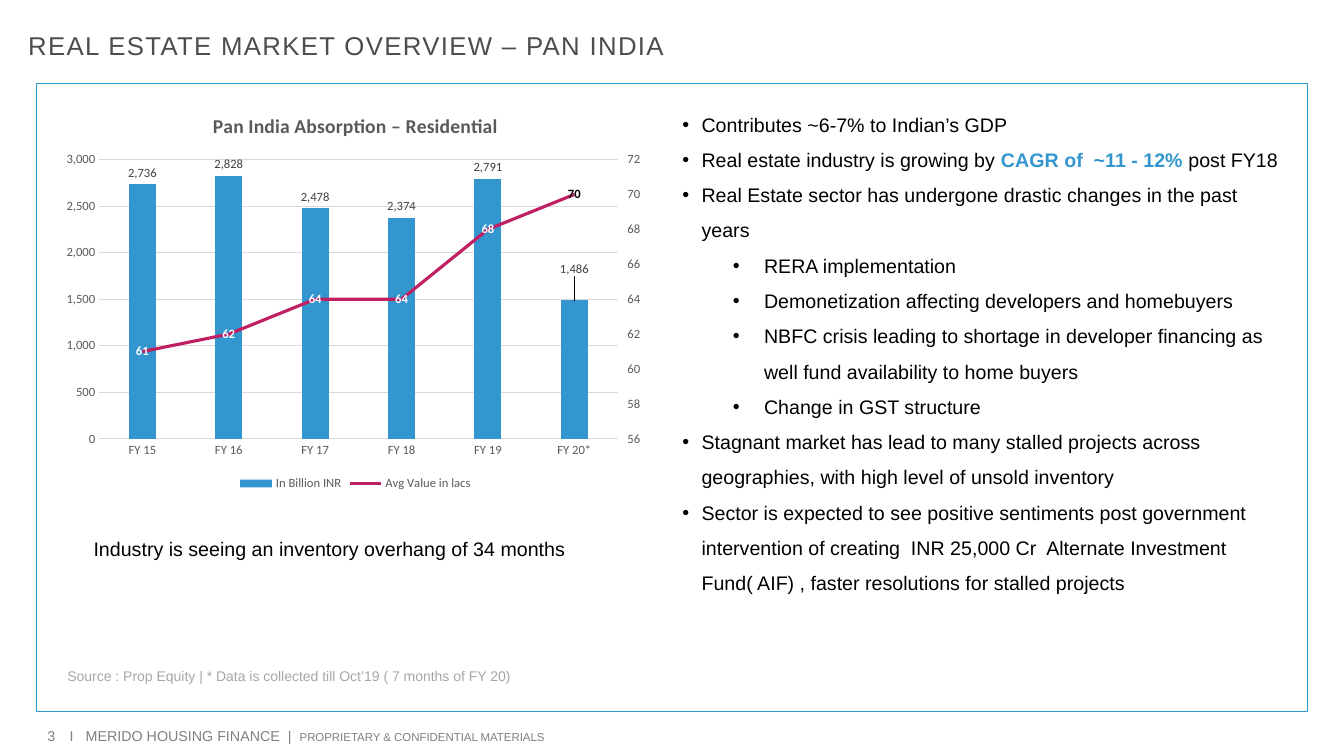
from copy import deepcopy
from dataclasses import dataclass

from lxml import etree
from pptx import Presentation
from pptx.chart.axis import CategoryAxis, ValueAxis
from pptx.chart.data import CategoryChartData
from pptx.dml.color import RGBColor
from pptx.enum.chart import (XL_CHART_TYPE, XL_LABEL_POSITION, XL_LEGEND_POSITION,
                             XL_MARKER_STYLE, XL_TICK_MARK)
from pptx.enum.shapes import MSO_SHAPE
from pptx.enum.text import MSO_ANCHOR, MSO_AUTO_SIZE, PP_ALIGN
from pptx.oxml import parse_xml
from pptx.oxml.ns import nsdecls, qn
from pptx.util import Inches, Pt

COLUMNS = XL_CHART_TYPE.COLUMN_CLUSTERED
ABOVE, CENTER = XL_LABEL_POSITION.OUTSIDE_END, XL_LABEL_POSITION.CENTER
BOTTOM = XL_LEGEND_POSITION.BOTTOM
NO_MARKER = XL_MARKER_STYLE.NONE
TICK_NONE, TICK_OUT = XL_TICK_MARK.NONE, XL_TICK_MARK.OUTSIDE
RECT = MSO_SHAPE.RECTANGLE
TOP, MIDDLE = MSO_ANCHOR.TOP, MSO_ANCHOR.MIDDLE
NO_FIT = MSO_AUTO_SIZE.NONE
LEFT = PP_ALIGN.LEFT

BLACK = RGBColor(0x00, 0x00, 0x00)
WHITE = RGBColor(0xFF, 0xFF, 0xFF)
BLUE = RGBColor(0x33, 0x96, 0xCE)
MAGENTA = RGBColor(0xC0, 0x1F, 0x63)
TITLE_GRAY = RGBColor(0x4D, 0x4D, 0x4D)
FOOTER_GRAY = RGBColor(0x80, 0x80, 0x80)
SOURCE_GRAY = RGBColor(0xA6, 0xA6, 0xA6)
AXIS_GRAY = RGBColor(0x59, 0x59, 0x59)
LABEL_GRAY = RGBColor(0x40, 0x40, 0x40)
GRID_GRAY = RGBColor(0xD9, 0xD9, 0xD9)

THOUSANDS = "#,##0"
RIGHT_VALUE_ID, RIGHT_CATEGORY_ID = "5001", "5002"


@dataclass
class Span:
    text: str
    size: float = 14
    color: RGBColor = BLACK
    bold: bool = False
    spacing: int = 0


@dataclass
class Bullet:
    spans: list[Span]
    level: int = 0


@dataclass
class Box:
    left: float
    top: float
    width: float
    height: float

    def emu(self) -> tuple:
        return tuple(Inches(v) for v in (self.left, self.top, self.width, self.height))


INDENTS = [(0.19, -0.19), (0.81, -0.31)]
BULLETS = [
    Bullet([Span("Contributes ~6-7% to Indian’s GDP")]),
    Bullet([Span("Real estate industry is growing by "),
            Span("CAGR of  ~11 - 12% ", color=BLUE, bold=True), Span("post FY18")]),
    Bullet([Span("Real Estate sector has undergone drastic changes in the past years")]),
    Bullet([Span("RERA implementation")], 1),
    Bullet([Span("Demonetization affecting developers and homebuyers")], 1),
    Bullet([Span("NBFC crisis leading to shortage in developer financing as well fund "
                 "availability to home buyers")], 1),
    Bullet([Span("Change in GST structure")], 1),
    Bullet([Span("Stagnant market has lead to many stalled projects across geographies, "
                 "with high level of unsold inventory")]),
    Bullet([Span("Sector is expected to see positive sentiments post government intervention "
                 "of creating  INR 25,000 Cr  Alternate Investment Fund( AIF) , faster "
                 "resolutions for stalled projects")]),
]


def set_font(font, size: float, color: RGBColor, bold: bool = False, name: str = "Calibri") -> None:
    font.name, font.size, font.bold = name, Pt(size), bold
    font.color.rgb = color


def add_spans(p, spans: list[Span]) -> None:
    for span in spans:
        r = p.add_run()
        r.text = span.text
        set_font(r.font, span.size, span.color, span.bold, "Arial")
        if span.spacing:
            r.font._element.set("spc", str(span.spacing * 100))


def add_text(slide, box: Box, spans: list[Span], *, inset: bool = True,
             anchor=TOP, wrap: bool = True):
    tf = slide.shapes.add_textbox(*box.emu()).text_frame
    tf.word_wrap, tf.vertical_anchor = wrap, anchor
    if not inset:
        tf.margin_left = tf.margin_right = tf.margin_top = tf.margin_bottom = 0
    add_spans(tf.paragraphs[0], spans)
    return tf


def add_bullets(slide, box: Box, bullets: list[Bullet]) -> None:
    tf = add_text(slide, box, [])
    for i, bullet in enumerate(bullets):
        p = tf.add_paragraph() if i else tf.paragraphs[0]
        margin, indent = INDENTS[bullet.level]
        pPr = p._p.get_or_add_pPr()
        pPr.set("marL", str(Inches(margin)))
        pPr.set("indent", str(Inches(indent)))
        etree.SubElement(pPr, qn("a:buFont")).set("typeface", "Arial")
        etree.SubElement(pPr, qn("a:buChar")).set("char", "•")
        p.level, p.line_spacing = bullet.level, 1.5
        add_spans(p, bullet.spans)


def manual_layout(**values):
    items = "".join(f'<c:{key} val="{value}"/>' for key, value in values.items())
    return parse_xml(f'<c:layout {nsdecls("c")}><c:manualLayout>{items}'
                     "</c:manualLayout></c:layout>")


def style_axis(axis) -> None:
    axis.major_tick_mark = axis.minor_tick_mark = TICK_NONE
    set_font(axis.tick_labels.font, 9, AXIS_GRAY)


def move_to_right_axis(chart) -> None:
    """Turn the second column series into a line on its own right-hand axis."""
    bars = chart.plots[0]._element
    ser = bars.findall(qn("c:ser"))[1]
    for invert in ser.findall(qn("c:invertIfNegative")):
        ser.remove(invert)
    line = parse_xml(f'<c:lineChart {nsdecls("c")}><c:grouping val="standard"/>'
                     '<c:varyColors val="0"/><c:marker val="1"/>'
                     f'<c:axId val="{RIGHT_CATEGORY_ID}"/><c:axId val="{RIGHT_VALUE_ID}"/>'
                     "</c:lineChart>")
    line.insert(2, ser)
    bars.addnext(line)

    left = chart.value_axis._element
    cat_el, val_el = deepcopy(chart.category_axis._element), deepcopy(left)
    left.addnext(val_el)
    val_el.addnext(cat_el)
    for el, own, other in ((cat_el, RIGHT_CATEGORY_ID, RIGHT_VALUE_ID),
                           (val_el, RIGHT_VALUE_ID, RIGHT_CATEGORY_ID)):
        el.find(qn("c:axId")).set("val", own)
        el.find(qn("c:crossAx")).set("val", other)
    val_el.find(qn("c:axPos")).set("val", "r")
    val_el.find(qn("c:crosses")).set("val", "max")
    CategoryAxis(cat_el).visible = False
    right = ValueAxis(val_el)
    right.has_major_gridlines = False
    right.minimum_scale, right.maximum_scale, right.major_unit = 56, 72, 2
    right.major_tick_mark = TICK_OUT


def label_series(series, position, color: RGBColor, last_color: RGBColor, bold: bool):
    """Label every point and return the label of the last one."""
    labels = series.data_labels
    labels.show_value, labels.position = True, position
    labels.number_format, labels.number_format_is_linked = THOUSANDS, False
    set_font(labels.font, 9, color, bold)
    last = series.points[5].data_label
    set_font(last.font, 9, last_color, bold)
    last.position = position
    return last


def add_absorption_chart(slide, box: Box) -> None:
    data = CategoryChartData(number_format=THOUSANDS)
    data.categories = ["FY 15", "FY 16", "FY 17", "FY 18", "FY 19", "FY 20*"]
    data.add_series("In Billion INR", [2736, 2828, 2478, 2374, 2791, 1486])
    data.add_series("Avg Value in lacs", [61, 62, 64, 64, 68, 70])
    chart = slide.shapes.add_chart(COLUMNS, *box.emu(), data).chart
    set_font(chart.font, 10, BLACK)
    chart.has_title = True
    r = chart.chart_title.text_frame.paragraphs[0].add_run()
    r.text = "Pan India Absorption – Residential"
    set_font(r.font, 14, AXIS_GRAY, True)
    chart.has_legend = True
    chart.legend.position, chart.legend.include_in_layout = BOTTOM, False
    set_font(chart.legend.font, 9, AXIS_GRAY)

    cat, val = chart.category_axis, chart.value_axis
    for axis in (cat, val):
        style_axis(axis)
    val.minimum_scale, val.maximum_scale, val.major_unit = 0, 3000, 500
    val.tick_labels.number_format, val.tick_labels.number_format_is_linked = THOUSANDS, False
    val.format.line.fill.background()
    for line in (cat.format.line, val.major_gridlines.format.line):
        line.color.rgb, line.width = GRID_GRAY, Pt(0.75)
    move_to_right_axis(chart)

    columns, trend = chart.plots
    columns.gap_width, columns.vary_by_categories = 219, False
    volume, price = columns.series[0], trend.series[0]
    volume.format.fill.solid()
    volume.format.fill.fore_color.rgb = BLUE
    price.format.line.color.rgb, price.format.line.width = MAGENTA, Pt(2.25)
    price.marker.style, price.smooth = NO_MARKER, False
    last = label_series(volume, ABOVE, LABEL_GRAY, LABEL_GRAY, False)
    last._get_or_add_dLbl().insert(1, manual_layout(x=0, y=-0.05))
    label_series(price, CENTER, WHITE, BLACK, True)
    columns._element.getparent().insert(0, manual_layout(
        layoutTarget="inner", xMode="edge", yMode="edge", x=0.07, y=0.16, w=0.87, h=0.7))


def main() -> None:
    prs = Presentation()
    prs.slide_width, prs.slide_height = Inches(13.33), Inches(7.5)
    slide = prs.slides.add_slide(prs.slide_layouts[5])

    title = slide.shapes.title
    title.left, title.top, title.width, title.height = Box(0.18, 0.24, 12.94, 0.41).emu()
    tf = title.text_frame
    tf.auto_size, tf.vertical_anchor = NO_FIT, MIDDLE
    p = tf.paragraphs[0]
    p.alignment = LEFT
    add_spans(p, [Span("REAL ESTATE MARKET OVERVIEW – PAN INDIA", 18.4, TITLE_GRAY, spacing=1)])

    frame = slide.shapes.add_shape(RECT, *Box(0.36, 0.83, 12.61, 6.23).emu())
    frame.shadow.inherit = False
    frame.fill.background()
    frame.line.color.rgb, frame.line.width = BLUE, Pt(1)

    add_bullets(slide, Box(6.67, 0.95, 6.23, 5.89), BULLETS)
    add_absorption_chart(slide, Box(0.57, 0.95, 5.91, 3.96))
    add_text(slide, Box(0.83, 5.28, 5.26, 0.34),
             [Span("Industry is seeing an inventory overhang of 34 months")])
    add_text(slide, Box(0.57, 6.57, 5.79, 0.27),
             [Span("Source : Prop Equity | * Data is collected till Oct’19 ( 7 months of FY 20)",
                   10, SOURCE_GRAY)])
    add_text(slide, Box(0.69, 7.21, 6.75, 0.18),
             [Span("I  ", 10.2, FOOTER_GRAY, spacing=1),
              Span("MERIDO HOUSING FINANCE  |  ", 10.2, FOOTER_GRAY),
              Span("PROPRIETARY & CONFIDENTIAL MATERIALS", 8.2, FOOTER_GRAY)], inset=False)
    add_text(slide, Box(0.47, 7.21, 0.18, 0.18), [Span("3", 10.2, FOOTER_GRAY)],
             inset=False, anchor=MIDDLE, wrap=False)
    prs.save("out.pptx")


if __name__ == "__main__":
    main()
